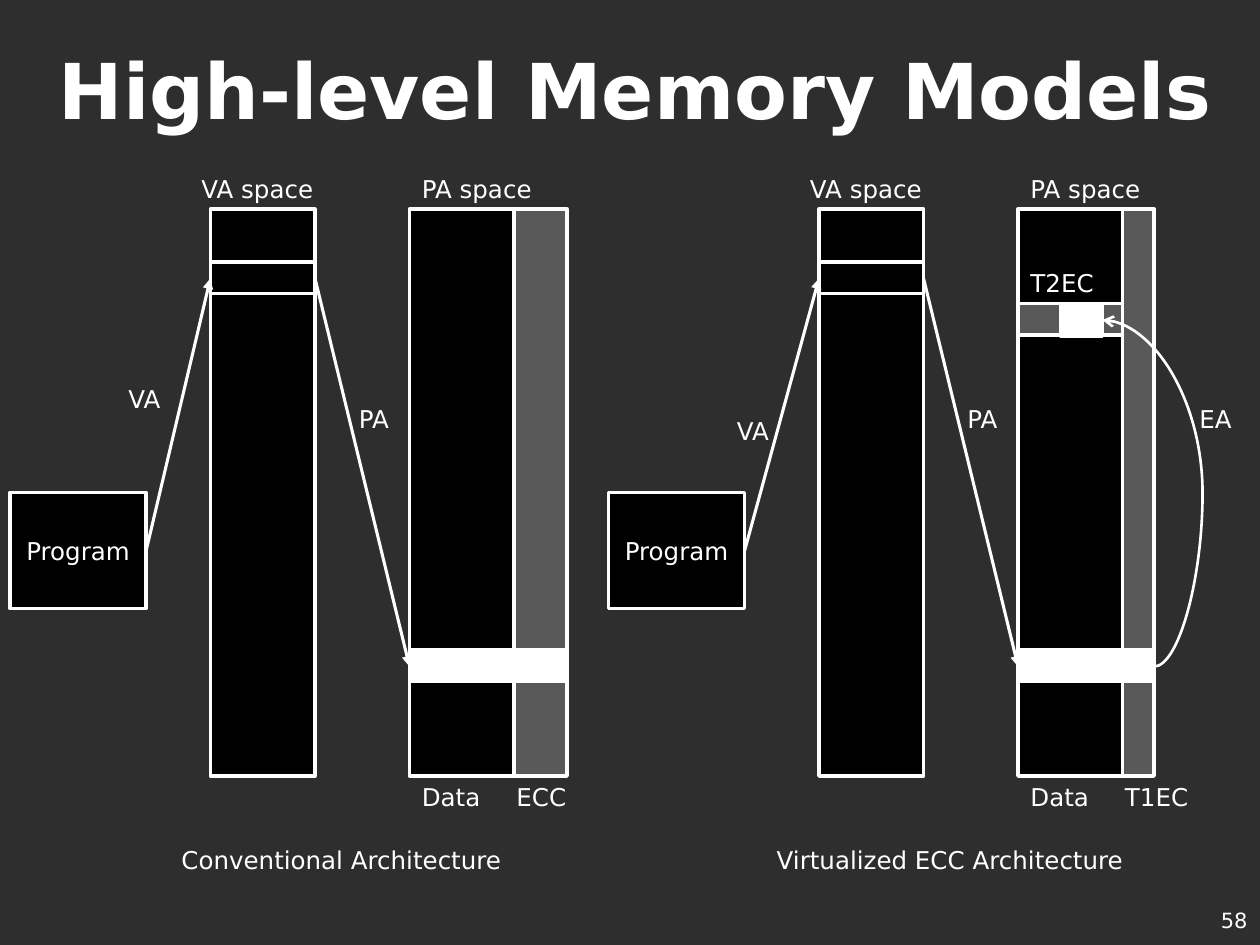
from dataclasses import dataclass

from lxml import etree
from pptx import Presentation
from pptx.dml.color import RGBColor
from pptx.enum.shapes import MSO_CONNECTOR, MSO_SHAPE
from pptx.enum.text import MSO_ANCHOR, PP_ALIGN
from pptx.oxml.ns import qn
from pptx.util import Inches, Pt

RECTANGLE = MSO_SHAPE.RECTANGLE
STRAIGHT, CURVE = MSO_CONNECTOR.STRAIGHT, MSO_CONNECTOR.CURVE
LEFT, CENTER, RIGHT = PP_ALIGN.LEFT, PP_ALIGN.CENTER, PP_ALIGN.RIGHT
TOP, MIDDLE = MSO_ANCHOR.TOP, MSO_ANCHOR.MIDDLE


@dataclass(frozen=True)
class Theme:
    font: str = "DejaVu Sans"
    background: RGBColor = RGBColor(0x2E, 0x2E, 0x2E)
    ink: RGBColor = RGBColor(0xFF, 0xFF, 0xFF)
    memory: RGBColor = RGBColor(0x00, 0x00, 0x00)
    ecc: RGBColor = RGBColor(0x59, 0x59, 0x59)
    title_size: int = 44
    label_size: int = 14
    number_size: int = 12
    outline: float = 2
    arrow: float = 1.75
    curve: float = 1.5


THEME = Theme()

# Measures shared by both memory models, relative to the model's box
COLUMN_TOP, COLUMN_HEIGHT, COLUMN_WIDTH = 0.33, 4.5, 0.83
VA_LEFT, PA_LEFT = 1.67, 3.25
ECC_LEFT = PA_LEFT + COLUMN_WIDTH
BLOCK_HEIGHT, BLOCK_TOP = 0.25, 3.83
PAGE_TOP, PAGE_MIDDLE = 0.75, 0.88
BLOCK_MIDDLE = 3.96
PROGRAM_TOP, PROGRAM_WIDTH, PROGRAM_HEIGHT = 2.58, 1.08, 0.92
LABEL_HEIGHT = 0.34


def write(shape, text, size, align=LEFT, anchor=TOP, bold=False):
    frame = shape.text_frame
    frame.text = text
    frame.word_wrap = True
    frame.vertical_anchor = anchor
    paragraph = frame.paragraphs[0]
    paragraph.alignment = align
    font = paragraph.runs[0].font
    font.name, font.size, font.bold = THEME.font, Pt(size), bold
    font.color.rgb = THEME.ink


def add_label(slide, text, left, top, width, height=LABEL_HEIGHT,
              size=THEME.label_size, **style):
    box = slide.shapes.add_textbox(
        Inches(left), Inches(top), Inches(width), Inches(height))
    write(box, text, size, **style)


def add_block(slide, left, top, width, height, fill=None):
    shape = slide.shapes.add_shape(
        RECTANGLE, Inches(left), Inches(top), Inches(width), Inches(height))
    shape.shadow.inherit = False
    if fill is None:
        shape.fill.background()
    else:
        shape.fill.solid()
        shape.fill.fore_color.rgb = fill
    shape.line.color.rgb = THEME.ink
    shape.line.width = Pt(THEME.outline)
    return shape


def add_arrow(slide, start, end, kind=STRAIGHT, width=THEME.arrow, head="triangle"):
    connector = slide.shapes.add_connector(
        kind, *(Inches(value) for value in (*start, *end)))
    connector.line.color.rgb = THEME.ink
    connector.line.width = Pt(width)
    etree.SubElement(connector.line._get_or_add_ln(), qn("a:tailEnd"), type=head)
    etree.SubElement(connector._element.spPr, qn("a:effectLst"))
    return connector


def add_title(slide, left, top, width, height):
    add_label(slide, "High-level Memory Models", left, top, width, height,
              size=THEME.title_size, align=CENTER, anchor=MIDDLE, bold=True)


def add_slide_number(slide, left, top, width, height):
    add_label(slide, "58", left, top, width, height,
              size=THEME.number_size, align=RIGHT, anchor=MIDDLE)


def add_memory_model(slide, left, top, width, program_left, va_label_top,
                     ecc_width, ecc_name, caption):
    va_left, pa_left, ecc_left = left + VA_LEFT, left + PA_LEFT, left + ECC_LEFT
    column_top, block_top = top + COLUMN_TOP, top + BLOCK_TOP
    page_middle = top + PAGE_MIDDLE

    # Virtual and physical address spaces
    add_block(slide, va_left, column_top, COLUMN_WIDTH, COLUMN_HEIGHT, THEME.memory)
    add_block(slide, va_left, top + PAGE_TOP, COLUMN_WIDTH, BLOCK_HEIGHT)
    for x, block_width, fill in ((pa_left, COLUMN_WIDTH, THEME.memory),
                                 (ecc_left, ecc_width, THEME.ecc)):
        add_block(slide, x, column_top, block_width, COLUMN_HEIGHT, fill)
    for x, block_width in ((pa_left, COLUMN_WIDTH), (ecc_left, ecc_width)):
        add_block(slide, x, block_top, block_width, BLOCK_HEIGHT, THEME.ink)

    # Program and address translation
    program = add_block(slide, program_left, top + PROGRAM_TOP,
                        PROGRAM_WIDTH, PROGRAM_HEIGHT, THEME.memory)
    write(program, "Program", THEME.label_size, CENTER, MIDDLE)
    add_arrow(slide,
              (program_left + PROGRAM_WIDTH, top + PROGRAM_TOP + PROGRAM_HEIGHT / 2),
              (va_left, page_middle))
    add_arrow(slide, (va_left + COLUMN_WIDTH, page_middle),
              (pa_left, top + BLOCK_MIDDLE))

    # Labels: text, offset from the model's box, width
    bottom = COLUMN_TOP + COLUMN_HEIGHT
    for text, x, y, label_width in (
            ("VA space", 1.5, 0, 1.25),
            ("PA space", PA_LEFT, 0, 1.17),
            ("VA", 0.92, va_label_top, 0.58),
            ("PA", 2.75, 1.83, 0.58),
            ("Data", PA_LEFT, bottom, 1),
            (ecc_name, 4, bottom, 0.75)):
        add_label(slide, text, left + x, top + y, label_width)
    add_label(slide, caption, left + 0.25, top + 5.33, width, align=CENTER)


def add_second_tier(slide, left, top, ecc_width):
    """Adds the T2EC line in data memory and the EA arrow that leads to it."""
    pa_left = left + PA_LEFT
    add_block(slide, pa_left, top + 1.08, COLUMN_WIDTH, BLOCK_HEIGHT, THEME.ecc)
    add_block(slide, pa_left + 0.34, top + 1.09, 0.33, BLOCK_HEIGHT, THEME.ink)
    add_label(slide, "T2EC", pa_left, top + PAGE_TOP, 0.75)
    curve = add_arrow(slide, (left + ECC_LEFT + ecc_width, top + BLOCK_MIDDLE),
                      (pa_left + 0.67, top + 1.21), CURVE, THEME.curve, "arrow")
    curve_guides = curve._element.spPr.find(qn("a:prstGeom")).get_or_add_avLst()
    etree.SubElement(curve_guides, qn("a:gd"), name="adj1", fmla="val -93900")
    add_label(slide, "EA", left + 4.59, top + 1.83, 0.58)


def main():
    presentation = Presentation()
    presentation.slide_width, presentation.slide_height = Inches(10), Inches(7.5)
    slide = presentation.slides.add_slide(presentation.slide_layouts[6])
    slide.background.fill.solid()
    slide.background.fill.fore_color.rgb = THEME.background

    add_title(slide, 0.17, 0.08, 9.75, 1.25)
    model_top, model_width = 1.33, 4.92
    virtualized_left, t1ec_width = 4.83, 0.25
    add_memory_model(slide, 0, model_top, model_width, 0.08, 1.67,
                     0.42, "ECC", "Conventional Architecture")
    add_memory_model(slide, virtualized_left, model_top, model_width,
                     virtualized_left, 1.92, t1ec_width, "T1EC",
                     "Virtualized ECC Architecture")
    add_second_tier(slide, virtualized_left, model_top, t1ec_width)
    add_slide_number(slide, 7.67, 7.1, 2.33, 0.4)
    presentation.save("out.pptx")


if __name__ == "__main__":
    main()
